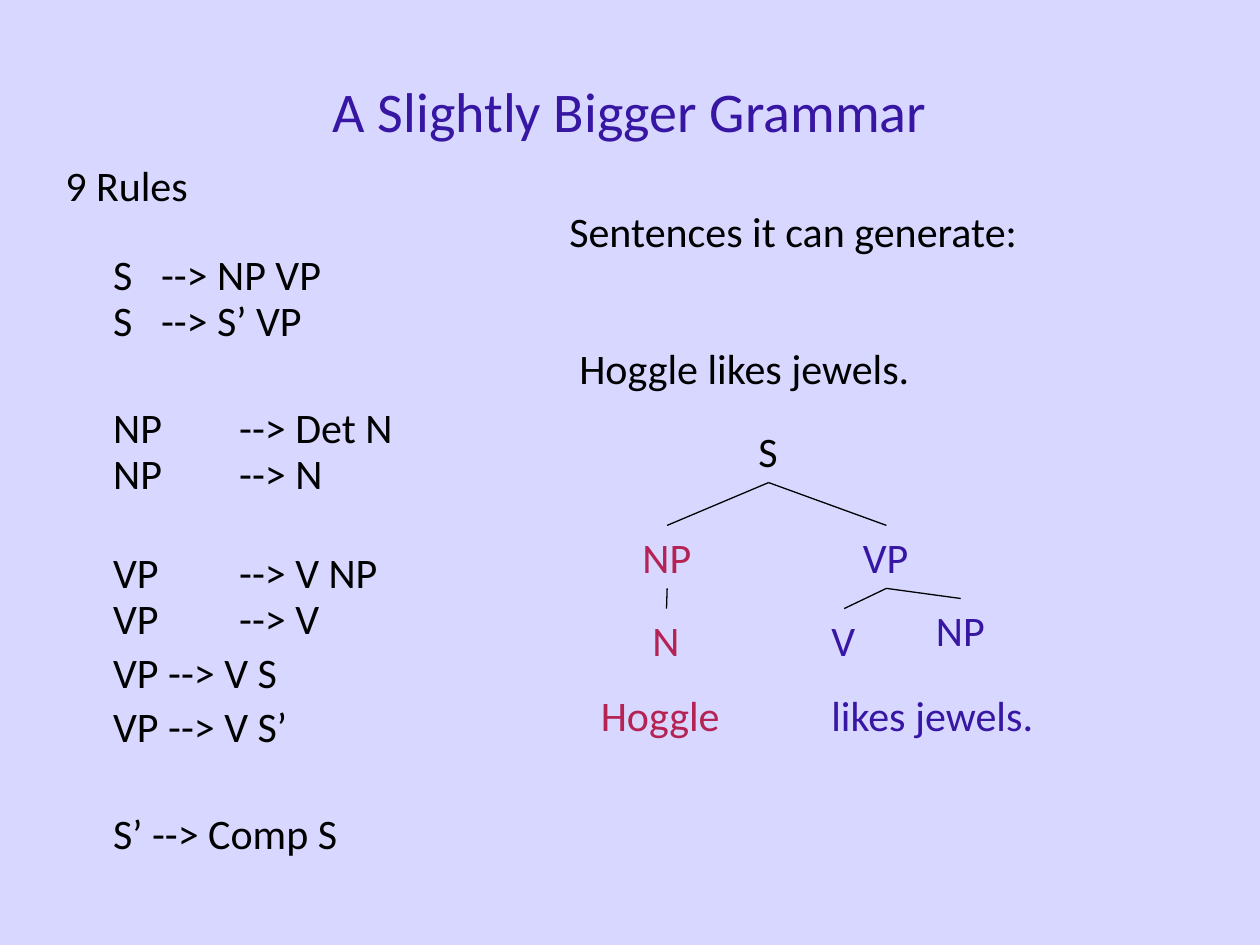
from pptx import Presentation
from pptx.dml.color import RGBColor
from pptx.enum.shapes import MSO_CONNECTOR
from pptx.enum.text import MSO_ANCHOR, PP_ALIGN
from pptx.oxml.ns import qn
from pptx.util import Inches, Pt
from lxml import etree

BLACK, VIOLET, CRIMSON = "000000", "3616A2", "B52254"
LABEL_H = 0.5
RULE_INDENT = 0.38

# Space before (pt), hanging indent up to the arrow (in), text
RULES = [
    (25, 0.38, "S\t--> NP VP"),
    (0.5, 0.38, "S\t--> S’ VP"),
    (35, 1, "NP\t--> Det N"),
    (0.5, 1, "NP\t--> N"),
    (30.5, 1, "VP\t--> V NP"),
    (0.5, 1, "VP\t--> V"),
    (5, 0, "VP --> V S"),
    (5, 0, "VP --> V S’"),
    (35, 0, "S’ --> Comp S"),
]

# Offset from the tree's corner, width, text, colour
NODES = {
    "s": (1.25, 0, 0.36, "S", BLACK),
    "np": (0.33, 0.84, 0.59, "NP", CRIMSON),
    "vp": (2.08, 0.84, 0.57, "VP", VIOLET),
    "n": (0.41, 1.5, 0.42, "N", CRIMSON),
    "v": (1.83, 1.5, 0.4, "V", VIOLET),
    "object": (2.66, 1.42, 0.59, "NP", VIOLET),
    "subject words": (0, 2.09, 1.15, "Hoggle", CRIMSON),
    "predicate words": (1.83, 2.09, 1.83, "likes jewels.", VIOLET),
}
BRANCHES = [("s", "np"), ("s", "vp"), ("np", "n"), ("vp", "v"), ("vp", "object")]


def rgb(color):
    return RGBColor.from_string(color)


def style(p, color, size=24):
    p.font.name = "Calibri"
    p.font.size = Pt(size)
    p.font.color.rgb = rgb(color)


def add_box(slide, x, y, w, h, wrap=True):
    tf = slide.shapes.add_textbox(Inches(x), Inches(y), Inches(w), Inches(h)).text_frame
    tf.word_wrap = wrap
    return tf


def add_label(slide, x, y, w, text, color=BLACK):
    p = add_box(slide, x, y, w, LABEL_H, wrap=False).paragraphs[0]
    p.text = text
    style(p, color)


def set_indent(p, left, hanging):
    p_pr = p._p.get_or_add_pPr()
    p_pr.set("marL", str(Inches(left + hanging)))
    p_pr.set("indent", str(-Inches(hanging)))


def add_title(slide, x, y, w, h):
    tf = add_box(slide, x, y, w, h)
    tf.vertical_anchor = MSO_ANCHOR.MIDDLE
    p = tf.paragraphs[0]
    p.text = "A Slightly Bigger Grammar"
    p.alignment = PP_ALIGN.CENTER
    style(p, VIOLET, 32)


def add_rules(slide, x, y, w, h):
    tf = add_box(slide, x, y, w, h)
    p = tf.paragraphs[0]
    p.text = "9 Rules"
    p.line_spacing = 0.9
    style(p, BLACK)
    for space, hanging, text in RULES:
        p = tf.add_paragraph()
        p.text = text
        p.line_spacing = 0.9
        p.space_before = Pt(space)
        style(p, BLACK)
        set_indent(p, RULE_INDENT, hanging)


def add_branch(slide, x1, y1, x2, y2):
    line = slide.shapes.add_connector(
        MSO_CONNECTOR.STRAIGHT, Inches(x1), Inches(y1), Inches(x2), Inches(y2))
    line.line.color.rgb = rgb(BLACK)
    line.line.width = Pt(0.75)
    etree.SubElement(line._element.spPr, qn("a:effectLst"))


def add_tree(slide, x, y):
    for dx, dy, w, text, color in NODES.values():
        add_label(slide, x + dx, y + dy, w, text, color)
    # Each branch runs from the parent's bottom centre to the child's top centre
    for parent, child in BRANCHES:
        px, py, pw = NODES[parent][:3]
        cx, cy, cw = NODES[child][:3]
        add_branch(slide, x + px + pw / 2, y + py + LABEL_H, x + cx + cw / 2, y + cy)


def main():
    prs = Presentation()
    prs.slide_width, prs.slide_height = Inches(10), Inches(7.5)
    slide = prs.slides.add_slide(prs.slide_layouts[6])
    slide.background.fill.solid()
    slide.background.fill.fore_color.rgb = rgb("D7D7FF")

    add_title(slide, 0, 0.25, 10, 1.25)
    add_rules(slide, 0.42, 1.26, 5, 6)
    # Example sentence and its parse
    add_label(slide, 4.42, 1.58, 3.82, "Sentences it can generate:")
    add_label(slide, 4.5, 2.67, 2.86, "Hoggle likes jewels.")
    add_tree(slide, 4.67, 3.33)
    prs.save("out.pptx")


if __name__ == "__main__":
    main()
